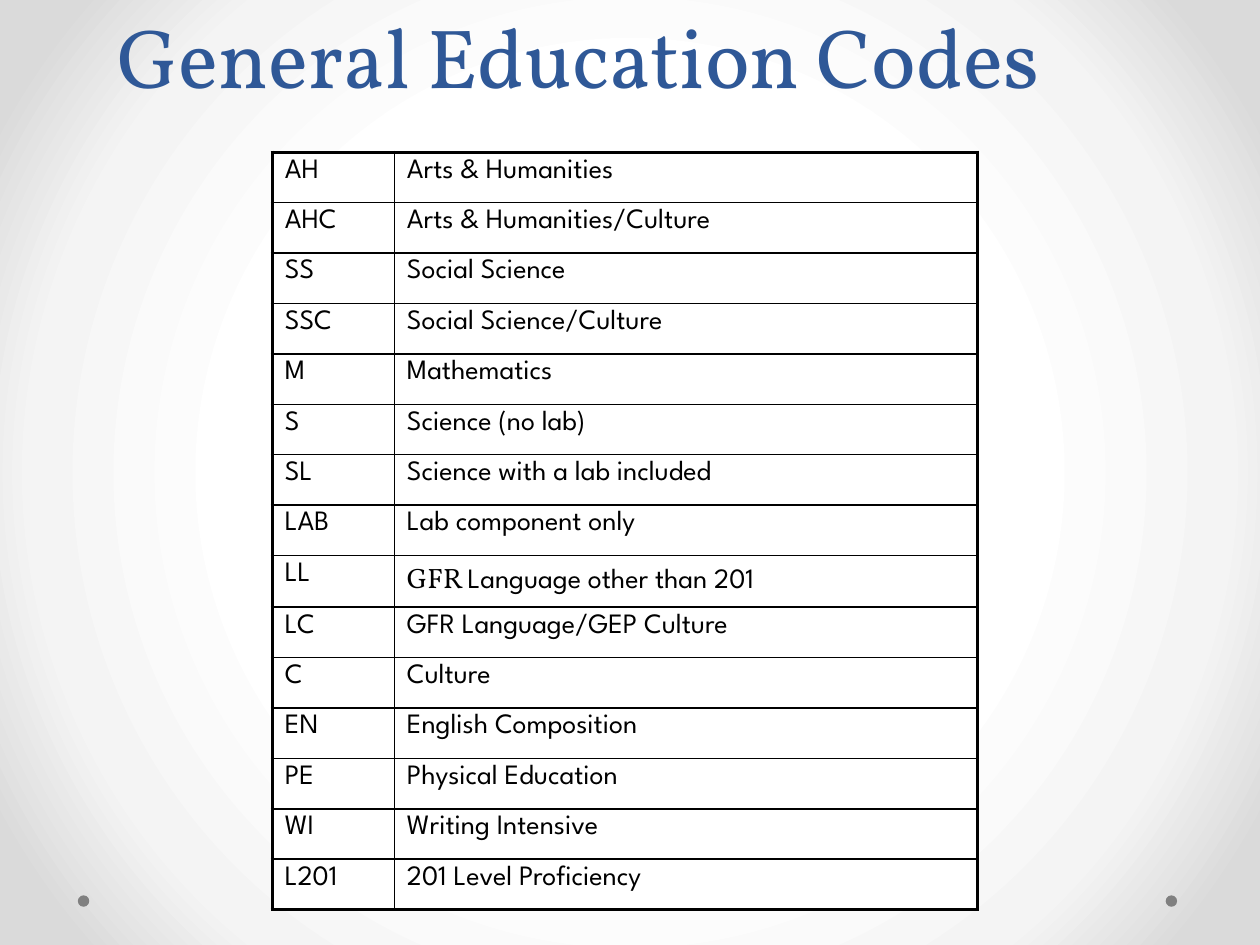
from lxml import etree
from pptx import Presentation
from pptx.dml.color import RGBColor
from pptx.enum import shapes, text
from pptx.oxml import ns, parse_xml
from pptx.util import Cm, Pt

COLORS = {"title": "2F5897", "ink": "000000", "cell": "FFFFFF", "dot": "808080"}
BACKGROUND_STOPS = [(50, "FFFFFF"), (76, "F4F4F4"), (92, "DADADA")]
HEAD_FONT, BODY_FONT = "Vollkorn", "League Spartan"
THICK, THIN = 2.25, 1

# A description is a list of (text, font) runs.
CODES = [
    (code, [(name, BODY_FONT)])
    for code, name in [
        ("AH", "Arts & Humanities"),
        ("AHC", "Arts & Humanities/Culture"),
        ("SS", "Social Science"),
        ("SSC", "Social Science/Culture"),
        ("M", "Mathematics"),
        ("S", "Science (no lab)"),
        ("SL", "Science with a lab included"),
        ("LAB", "Lab component only"),
    ]
] + [("LL", [("GFR ", HEAD_FONT), ("Language other than 201", BODY_FONT)])] + [
    (code, [(name, BODY_FONT)])
    for code, name in [
        ("LC", "GFR Language/GEP Culture"),
        ("C", "Culture"),
        ("EN", "English Composition"),
        ("PE", "Physical Education"),
        ("WI", "Writing Intensive"),
        ("L201", "201 Level Proficiency"),
    ]
]


def rgb(name):
    return RGBColor.from_string(COLORS[name])


def sub(parent, tag, **attrs):
    return etree.SubElement(parent, ns.qn(tag), attrs)


class CodeSlide:
    """Holds the slide and draws each kind of element in its style."""

    def __init__(self, prs):
        self.s = prs.slides.add_slide(prs.slide_layouts[5])

    def background(self):
        self.s.background.fill.solid()
        bg = self.s._element.find(".//" + ns.qn("p:bgPr"))
        grad = parse_xml(f'<a:gradFill {ns.nsdecls("a")} rotWithShape="1"/>')
        bg.replace(bg[0], grad)
        stops = sub(grad, "a:gsLst")
        for pos, color in BACKGROUND_STOPS:
            sub(sub(stops, "a:gs", pos=str(pos * 1000)), "a:srgbClr", val=color)
        circle = sub(grad, "a:path", path="circle")
        sub(circle, "a:fillToRect", l="50000", t="50000", r="50000", b="50000")

    def dot(self, left, top, size):
        sp = self.s.shapes.add_shape(
            shapes.MSO_SHAPE.OVAL, Cm(left), Cm(top), Cm(size), Cm(size))
        sp.shadow.inherit = False
        sp.fill.solid()
        sp.fill.fore_color.rgb = rgb("dot")
        sp.line.fill.background()

    def title(self, words, left, top, width, height):
        sp = self.s.shapes.title
        sp.left, sp.top, sp.width, sp.height = map(Cm, (left, top, width, height))
        tf = sp.text_frame
        tf.text = words
        tf.auto_size = text.MSO_AUTO_SIZE.NONE
        tf.vertical_anchor = text.MSO_ANCHOR.BOTTOM
        p = tf.paragraphs[0]
        p.alignment = text.PP_ALIGN.CENTER
        p.line_spacing = Pt(58)
        p.font.size, p.font.name = Pt(48), HEAD_FONT
        p.font.color.rgb = rgb("title")

    def cell(self, cell, runs, borders):
        p = cell.text_frame.paragraphs[0]
        before = sub(p._p.get_or_add_pPr(), "a:spcBef")
        sub(before, "a:spcPct", val="20000")
        for words, font in runs:
            r = p.add_run()
            r.text = words
            r.font.size, r.font.name = Pt(16), font
            r.font.color.rgb = rgb("ink")
        tc_pr = cell._tc.get_or_add_tcPr()
        for side, width in borders.items():
            line = sub(tc_pr, f"a:ln{side}", w=str(Pt(width)))
            sub(sub(line, "a:solidFill"), "a:srgbClr", val=COLORS["ink"])
        cell.fill.solid()
        cell.fill.fore_color.rgb = rgb("cell")

    def code_table(self, rows, left, top, col_widths, height):
        table = self.s.shapes.add_table(
            len(rows), 2, Cm(left), Cm(top), Cm(sum(col_widths)), Cm(height)).table
        table.first_row = table.horz_banding = False
        for col, width in zip(table.columns, col_widths):
            col.width = Cm(width)
        last = len(rows) - 1
        for i, (code, description) in enumerate(rows):
            for j, runs in enumerate([[(code, BODY_FONT)], description]):
                outer = {"L": j == 0, "R": j == 1, "T": i == 0, "B": i == last}
                borders = {k: THICK if edge else THIN for k, edge in outer.items()}
                self.cell(table.cell(i, j), runs, borders)


def main():
    prs = Presentation()
    prs.slide_width, prs.slide_height = Cm(25.4), Cm(19.05)
    slide = CodeSlide(prs)
    slide.background()
    for left in (23.5, 1.57):
        slide.dot(left, 18.05, 0.23)
    slide.title("General Education Codes", 0.89, 0.3, 21.54, 1.96)
    slide.code_table(CODES, 5.49, 3.07, (2.46, 11.76), 15.24)
    prs.save("out.pptx")


if __name__ == "__main__":
    main()
